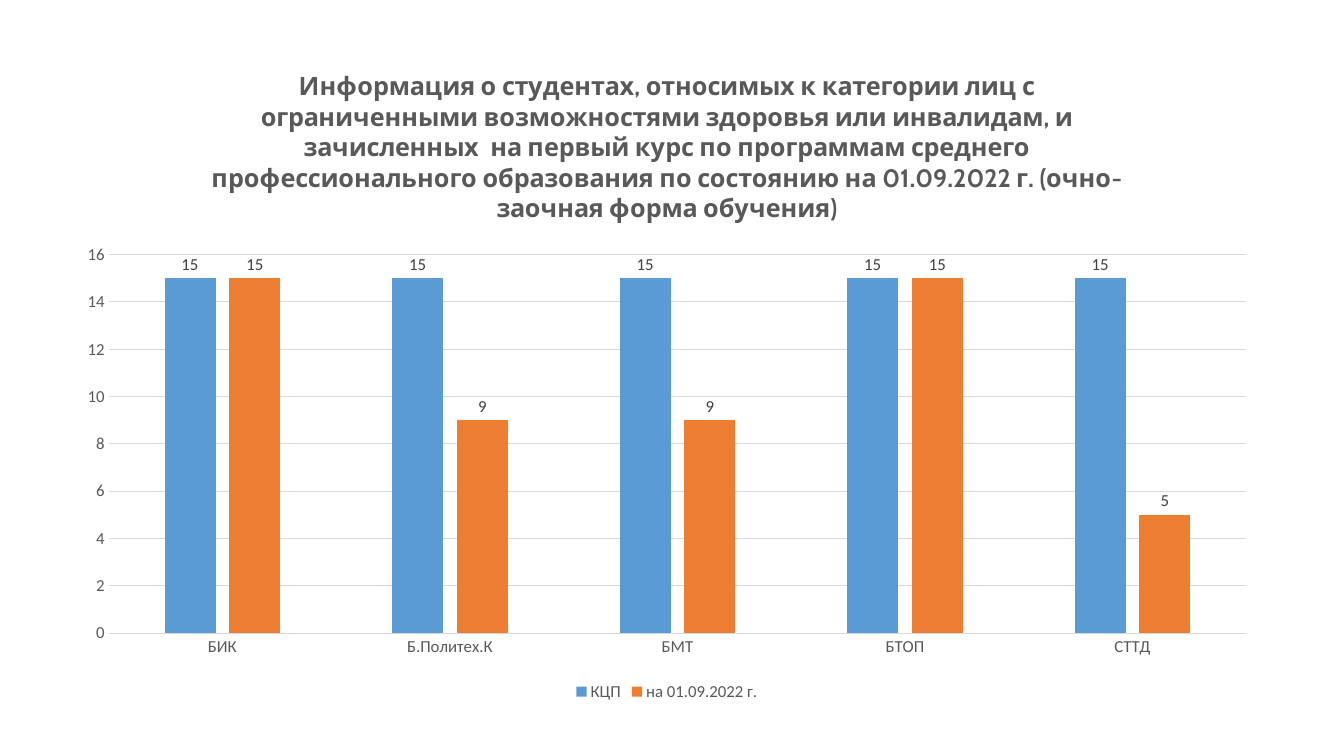
import pptx
import pptx.chart.data
import pptx.dml.color
import pptx.enum.chart
import pptx.util

# Content
TITLE = (
    "Информация о студентах, относимых к категории лиц с ограниченными "
    "возможностями здоровья или инвалидам, и зачисленных  на первый курс "
    "по программам среднего профессионального образования по состоянию "
    "на 01.09.2022 г. (очно-заочная форма обучения)"
)
CATS = ["БИК", "Б.Политех.К", "БМТ", "БТОП", "СТТД"]
SERIES = [
    ("КЦП", "blue", (15, 15, 15, 15, 15)),
    ("на 01.09.2022 г.", "orange", (15, 9, 9, 15, 5)),
]
COLORS = {
    "blue": "5B9BD5",
    "orange": "ED7D31",
    "text": "595959",
    "label": "404040",
    "line": "D9D9D9",
}
BOX = [pptx.util.Inches(n) for n in (0.63, 0.45, 11.97, 6.55)]


def rgb(name):
    return pptx.dml.color.RGBColor.from_string(COLORS[name])


def style(font, size=12, color="text", face="Calibri", bold=False):
    font.size = pptx.util.Pt(size)
    font.color.rgb = rgb(color)
    font.name = face
    font.bold = bold


def put_text(frame, text, **form):
    run = frame.paragraphs[0].add_run()
    run.text = text
    style(run.font, **form)


def rule(line):
    line.color.rgb = rgb("line")
    line.width = pptx.util.Pt(0.75)


def add_bars(slide):
    kinds = pptx.enum.chart
    data = pptx.chart.data.CategoryChartData()
    data.categories = CATS
    for name, _, vals in SERIES:
        data.add_series(name, vals)
    chart = slide.shapes.add_chart(
        kinds.XL_CHART_TYPE.COLUMN_CLUSTERED, *BOX, data).chart
    style(chart.font)

    # Title and legend
    chart.has_title = True
    put_text(chart.chart_title.text_frame, TITLE,
             size=18, face="Cabin", bold=True)
    chart.chart_title.include_in_layout = False
    chart.has_legend = True
    chart.legend.position = kinds.XL_LEGEND_POSITION.BOTTOM
    chart.legend.include_in_layout = False
    style(chart.legend.font)

    # Axes
    for axis in (chart.category_axis, chart.value_axis):
        axis.major_tick_mark = kinds.XL_TICK_MARK.NONE
        axis.minor_tick_mark = kinds.XL_TICK_MARK.NONE
        style(axis.tick_labels.font)
    rule(chart.category_axis.format.line)
    chart.value_axis.format.line.fill.background()
    chart.value_axis.has_major_gridlines = True
    rule(chart.value_axis.major_gridlines.format.line)

    # Columns and their labels
    plot = chart.plots[0]
    plot.gap_width = 219
    plot.overlap = -27
    plot.vary_by_categories = False
    for bars, (_, color, _) in zip(plot.series, SERIES):
        bars.format.fill.solid()
        bars.format.fill.fore_color.rgb = rgb(color)
        labels = bars.data_labels
        labels.show_value = True
        labels.position = kinds.XL_LABEL_POSITION.OUTSIDE_END
        style(labels.font, color="label")


def main():
    deck = pptx.Presentation()
    deck.slide_width = pptx.util.Inches(13.33)
    deck.slide_height = pptx.util.Inches(7.5)
    add_bars(deck.slides.add_slide(deck.slide_layouts[6]))
    deck.save("out.pptx")


if __name__ == "__main__":
    main()
